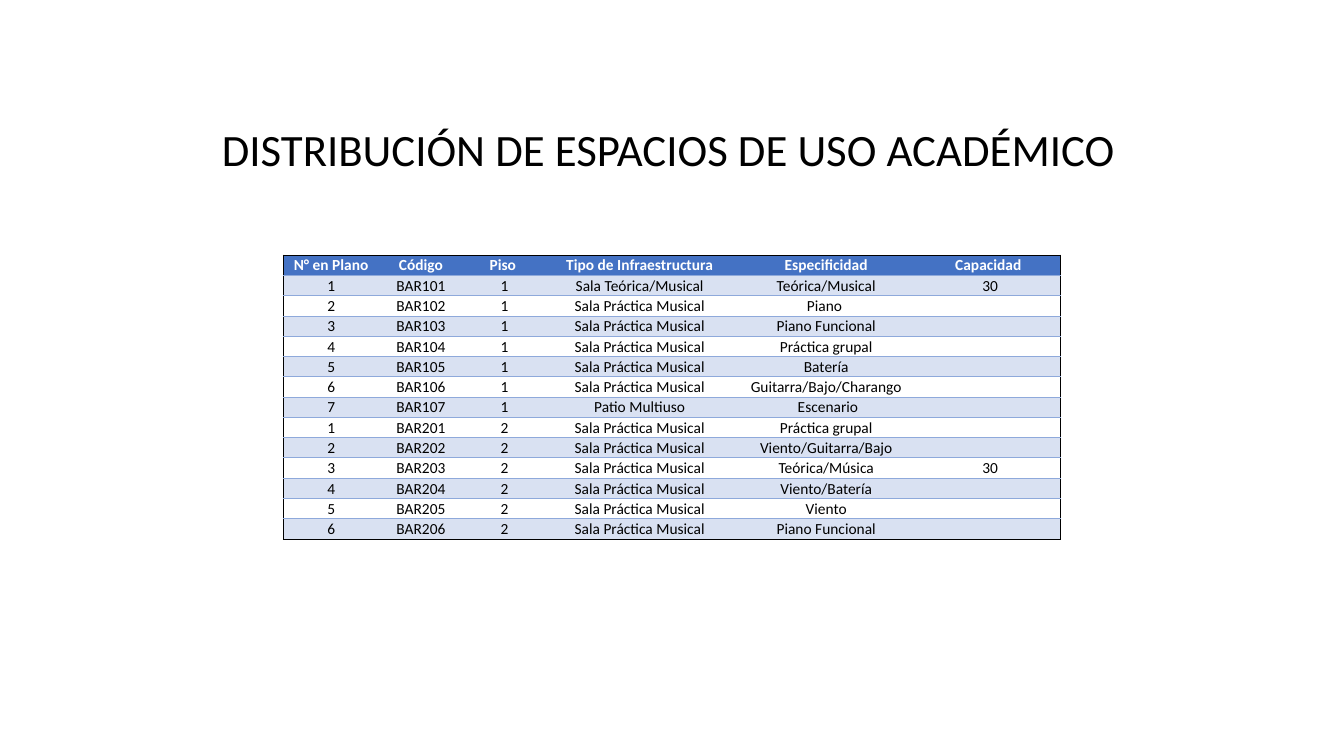
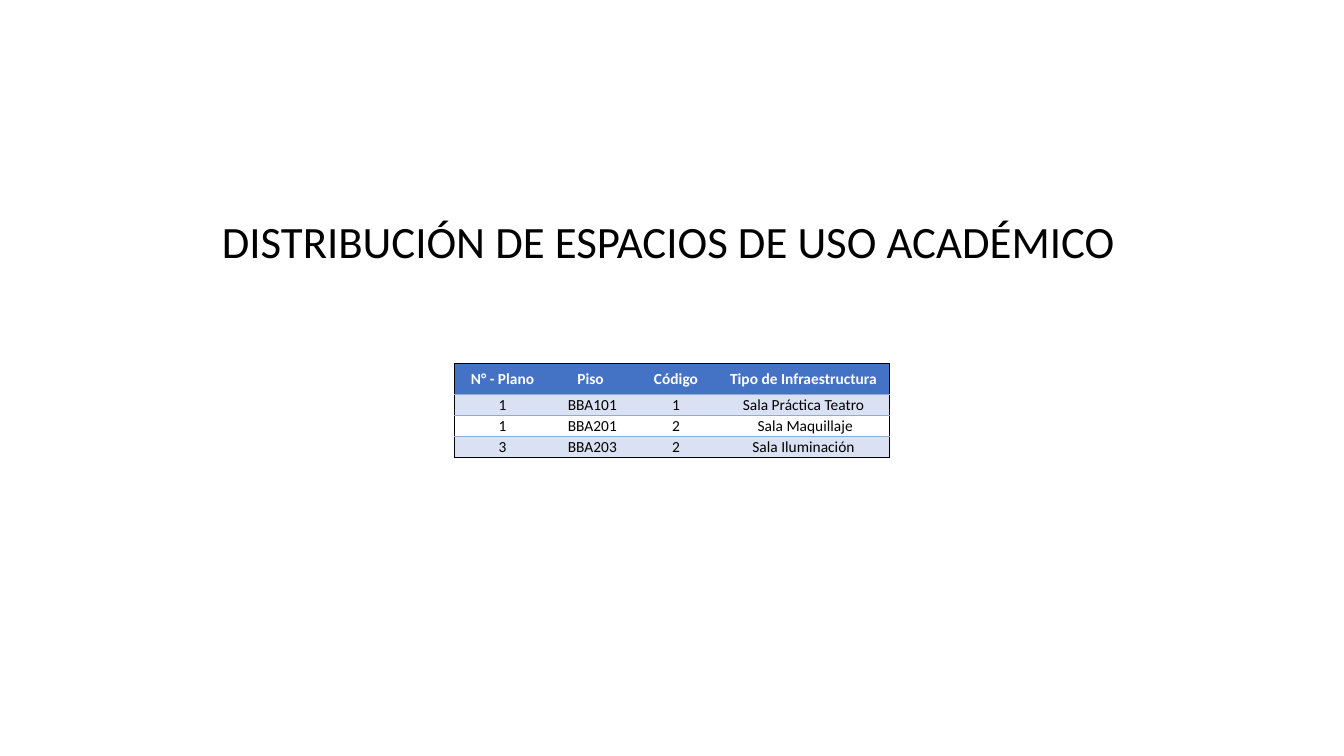
from lxml import etree
from pptx import Presentation
from pptx.dml.color import RGBColor
from pptx.enum.text import MSO_ANCHOR, MSO_AUTO_SIZE, PP_ALIGN
from pptx.oxml.ns import qn
from pptx.util import Inches, Pt

LEFT, CENTER = PP_ALIGN.LEFT, PP_ALIGN.CENTER
TOP, MIDDLE = MSO_ANCHOR.TOP, MSO_ANCHOR.MIDDLE
NO_AUTOFIT = MSO_AUTO_SIZE.NONE

FONT = "Calibri"
BLACK, WHITE = "000000", "FFFFFF"
HEADER_BLUE, BAND_BLUE, RULE_BLUE = "4472C4", "D9E1F2", "8EA9DB"
RULE_WIDTH = 0.5
TITLE = "DISTRIBUCIÓN DE ESPACIOS DE USO ACADÉMICO"
PRACTICE = "Sala Práctica Musical"

MUSIC_ROWS = [
    ("N° en Plano", "Código", "Piso ", "Tipo de Infraestructura", "Especificidad", "Capacidad "),
    ("1", "BAR101", "1", "Sala Teórica/Musical", "Teórica/Musical", "30"),
    ("2", "BAR102", "1", PRACTICE, "Piano ", ""),
    ("3", "BAR103", "1", PRACTICE, "Piano Funcional", ""),
    ("4", "BAR104", "1", PRACTICE, "Práctica grupal", ""),
    ("5", "BAR105", "1", PRACTICE, "Batería", ""),
    ("6", "BAR106", "1", PRACTICE, "Guitarra/Bajo/Charango", ""),
    ("7", "BAR107", "1", "Patio Multiuso", " Escenario", ""),
    ("1", "BAR201", "2", PRACTICE, "Práctica grupal", ""),
    ("2", "BAR202", "2", PRACTICE, "Viento/Guitarra/Bajo", ""),
    ("3", "BAR203", "2", PRACTICE, "Teórica/Música", "30"),
    ("4", "BAR204", "2", PRACTICE, "Viento/Batería", ""),
    ("5", "BAR205", "2", PRACTICE, "Viento", ""),
    ("6", "BAR206", "2", PRACTICE, "Piano Funcional", ""),
]
THEATRE_ROWS = [
    ("N° - Plano", "Piso ", "Código", "Tipo de Infraestructura"),
    ("1", "BBA101", "1", "Sala Práctica Teatro"),
    ("1", "BBA201", "2", " Sala Maquillaje"),
    ("3", "BBA203", "2", "Sala Iluminación"),
]
SLIDES = [
    dict(title_top=1.12, rows=MUSIC_ROWS, left=2.81, top=2.53, height=2.82,
         header_height=2.82 / len(MUSIC_ROWS),
         widths=(0.95, 0.83, 0.83, 1.85, 1.85, 1.4), frame=0.5),
    dict(title_top=2.03, rows=THEATRE_ROWS, left=4.51, top=3.61, height=0.93,
         header_height=0.3, widths=(0.95, 0.83, 0.83, 1.7), frame=1),
]


def rgb(color):
    return RGBColor.from_string(color)


def write(tf, text, size=11, color=BLACK, bold=False, align=CENTER):
    """Fill the first paragraph; an empty one still keeps the height of its size."""
    p = tf.paragraphs[0]
    p.alignment = align
    if not text:
        etree.SubElement(p._p, qn("a:endParaRPr"), sz=str(size * 100))
        return p
    r = p.add_run()
    r.text = text
    r.font.name, r.font.size, r.font.bold = FONT, Pt(size), bold
    r.font.color.rgb = rgb(color)
    return p


def add_border(cell, side, line):
    """Draw one side (L, R, T or B); line is (colour, points) or None."""
    ln = etree.SubElement(cell._tc.get_or_add_tcPr(), qn(f"a:ln{side}"))
    if line is None:
        etree.SubElement(ln, qn("a:noFill"))
        return
    color, width = line
    ln.set("w", str(Pt(width)))
    fill = etree.SubElement(ln, qn("a:solidFill"))
    etree.SubElement(fill, qn("a:srgbClr"), val=color)


def add_title(slide, top):
    sp = slide.shapes.title
    sp.left, sp.top, sp.width, sp.height = (Inches(v) for v in (2.1, top, 9.13, 0.65))
    tf = sp.text_frame
    tf.word_wrap, tf.auto_size, tf.vertical_anchor = True, NO_AUTOFIT, TOP
    p = write(tf, TITLE, size=32, align=LEFT)
    p.line_spacing, p.space_before, p.space_after = 1.07, Pt(0), Pt(8)


def add_room_table(slide, rows, left, top, height, header_height, widths, frame):
    last_row, last_col = len(rows) - 1, len(widths) - 1
    table = slide.shapes.add_table(
        len(rows), len(widths), Inches(left), Inches(top),
        Inches(sum(widths)), Inches(height)).table
    table.first_row = table.horz_banding = False
    for column, width in zip(table.columns, widths):
        column.width = Inches(width)
    outer, rule = (BLACK, frame), (RULE_BLUE, RULE_WIDTH)
    for i, row in enumerate(rows):
        table.rows[i].height = Inches(
            (height - header_height) / last_row if i else header_height)
        for j, text in enumerate(row):
            cell = table.cell(i, j)
            cell.vertical_anchor = MIDDLE
            cell.margin_left = cell.margin_right = cell.margin_top = Inches(0.01)
            cell.margin_bottom = 0
            add_border(cell, "L", outer if j == 0 else None)
            add_border(cell, "R", outer if j == last_col else None)
            add_border(cell, "T", outer if i == 0 else rule)
            add_border(cell, "B", outer if i == last_row else rule)
            if i == 0 or i % 2:
                cell.fill.solid()
                cell.fill.fore_color.rgb = rgb(BAND_BLUE if i else HEADER_BLUE)
            else:
                cell.fill.background()
            write(cell.text_frame, text, color=BLACK if i else WHITE, bold=i == 0)


def main():
    prs = Presentation()
    prs.slide_width, prs.slide_height = Inches(13.33), Inches(7.5)
    for content in SLIDES:
        slide = prs.slides.add_slide(prs.slide_layouts[5])
        add_title(slide, content["title_top"])
        add_room_table(slide, **{k: v for k, v in content.items() if k != "title_top"})
    prs.save("out.pptx")


if __name__ == "__main__":
    main()
